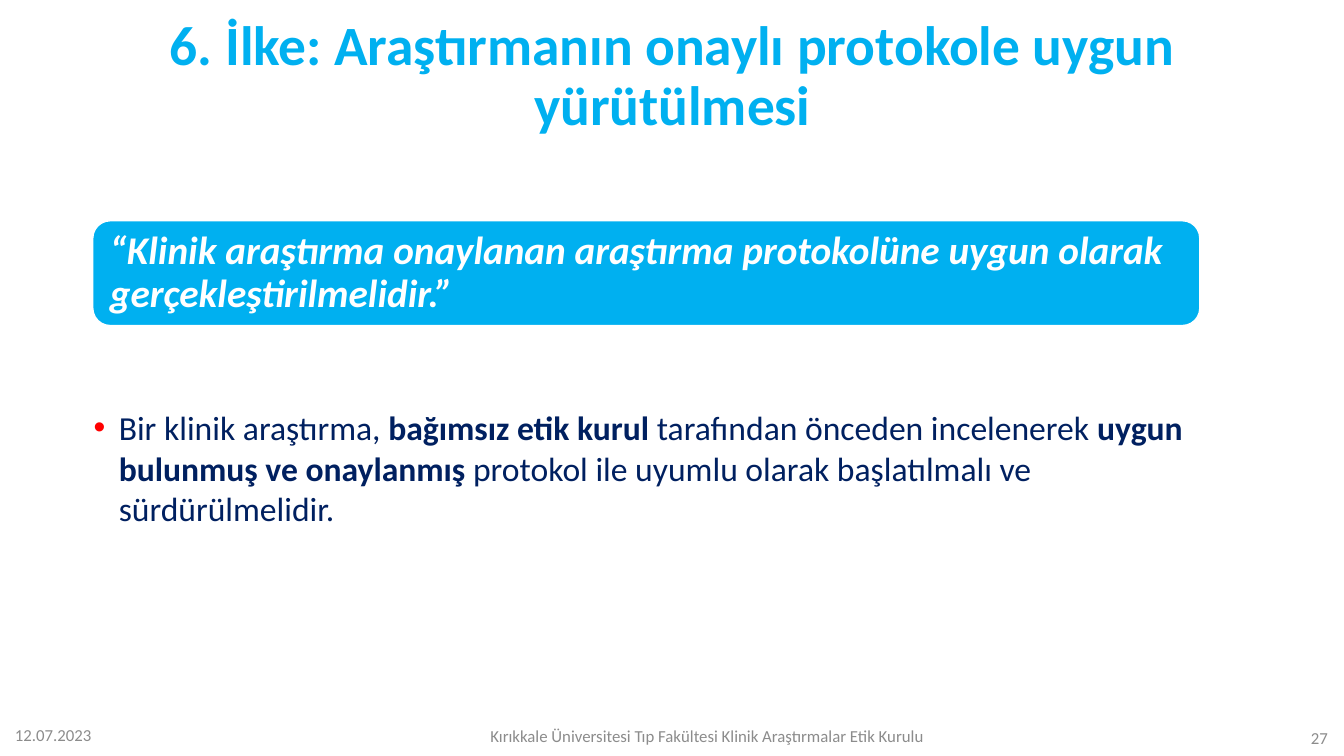
"""Builds a slide on the sixth principle: keeping to the approved protocol."""
from lxml.etree import SubElement as Sub
from pptx import Presentation
from pptx.dml.color import RGBColor as Rgb
from pptx.enum.shapes import MSO_SHAPE as Form
from pptx.enum.text import MSO_ANCHOR as Anchor, MSO_AUTO_SIZE as Fit, PP_ALIGN as Align
from pptx.oxml.ns import qn
from pptx.util import Inches, Pt

HUES = {"sky": "00B0F0", "navy": "002060", "white": "FFFFFF", "grey": "8C8C8C", "red": "FF0000"}
FONT = "Calibri"

TITLE = "6. İlke: Araştırmanın onaylı protokole uygun yürütülmesi"
QUOTE = "“Klinik araştırma onaylanan araştırma protokolüne uygun olarak gerçekleştirilmelidir.”"
BODY = [
    ("Bir klinik araştırma, ", False),
    ("bağımsız etik kurul", True),
    (" tarafından önceden incelenerek ", False),
    ("uygun bulunmuş ve onaylanmış ", True),
    ("protokol ile uyumlu olarak başlatılmalı ve sürdürülmelidir.", False),
]
FOOT = [
    ("12.07.2023", (0.05, 7.11, 3, 0.36), Align.LEFT),
    ("27", (10.27, 7.17, 3, 0.3), Align.RIGHT),
    ("Kırıkkale Üniversitesi Tıp Fakültesi Klinik Araştırmalar Etik Kurulu",
     (4.42, 7.1, 5.19, 0.4), Align.CENTER),
]


def rgb(hue):
    return Rgb.from_string(HUES[hue])


def put(item, values):
    for key, value in values.items():
        setattr(item, key, value)


def write(shape, runs, size, hue, frame=None, para=None, italic=False):
    text = shape.text_frame
    put(text, {"word_wrap": True, "auto_size": Fit.NONE,
               "vertical_anchor": Anchor.MIDDLE, **(frame or {})})
    line = text.paragraphs[0]
    put(line, para or {})
    for words, bold in runs:
        run = line.add_run()
        run.text = words
        put(run.font, {"name": FONT, "size": Pt(size), "bold": bold, "italic": italic})
        run.font.color.rgb = rgb(hue)
    return line


def bullet(line, hue, indent):
    props = line._p.get_or_add_pPr()
    props.set("marL", str(indent))
    props.set("indent", str(-indent))
    tint = Sub(props, qn("a:buClr"))
    Sub(tint, qn("a:srgbClr"), val=HUES[hue])
    Sub(props, qn("a:buFont"), typeface="Arial")
    Sub(props, qn("a:buChar"), char="•")


def main():
    deck = Presentation()
    put(deck, {"slide_width": Inches(13.33), "slide_height": Inches(7.5)})
    slide = deck.slides.add_slide(deck.slide_layouts[5])
    shapes = slide.shapes

    title = shapes.title
    spot = map(Inches, (0.92, 0.27, 11.5, 0.99))
    put(title, dict(zip(("left", "top", "width", "height"), spot)))
    write(title, [(TITLE, True)], 39.6, "sky",
          para={"alignment": Align.CENTER, "line_spacing": 0.9})

    panel = shapes.add_shape(Form.ROUNDED_RECTANGLE, *map(Inches, (0.92, 2.19, 10.98, 1.04)))
    panel.shadow.inherit = False
    panel.fill.solid()
    panel.fill.fore_color.rgb = rgb("sky")
    panel.line.color.rgb = rgb("white")
    panel.line.width = Pt(1)
    sides = ("margin_left", "margin_right", "margin_top", "margin_bottom")
    write(panel, [(QUOTE, True)], 28, "white", dict.fromkeys(sides, Inches(0.12)),
          {"alignment": Align.LEFT, "line_spacing": 0.9}, italic=True)

    body = shapes.add_textbox(*map(Inches, (0.83, 3.99, 11.5, 2.76)))
    line = write(body, BODY, 24, "navy", {"vertical_anchor": Anchor.TOP})
    bullet(line, "red", Inches(0.25))

    for words, spot, align in FOOT:
        note = shapes.add_textbox(*map(Inches, spot))
        write(note, [(words, False)], 12, "grey", para={"alignment": align})

    deck.save("out.pptx")


if __name__ == "__main__":
    main()
